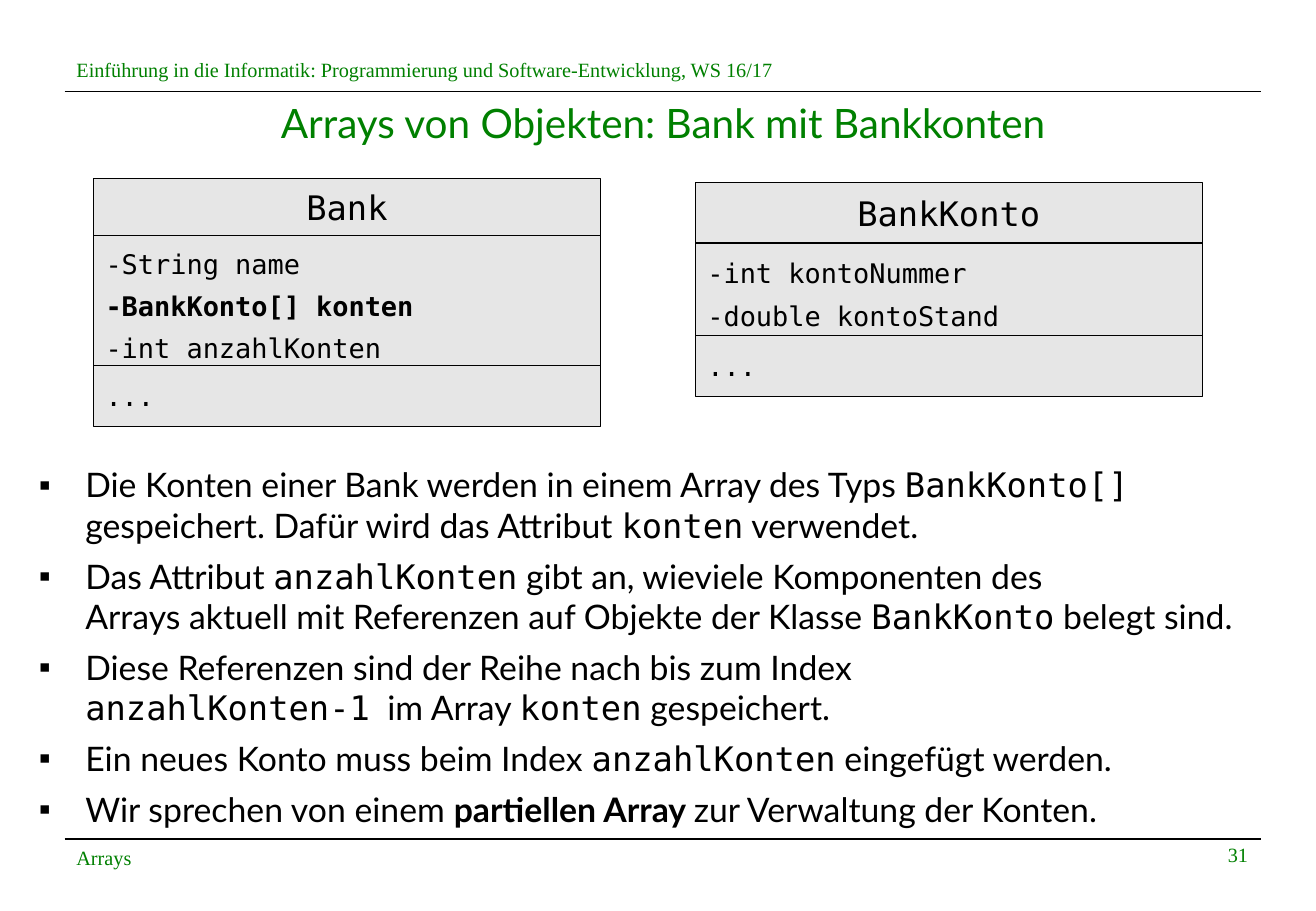
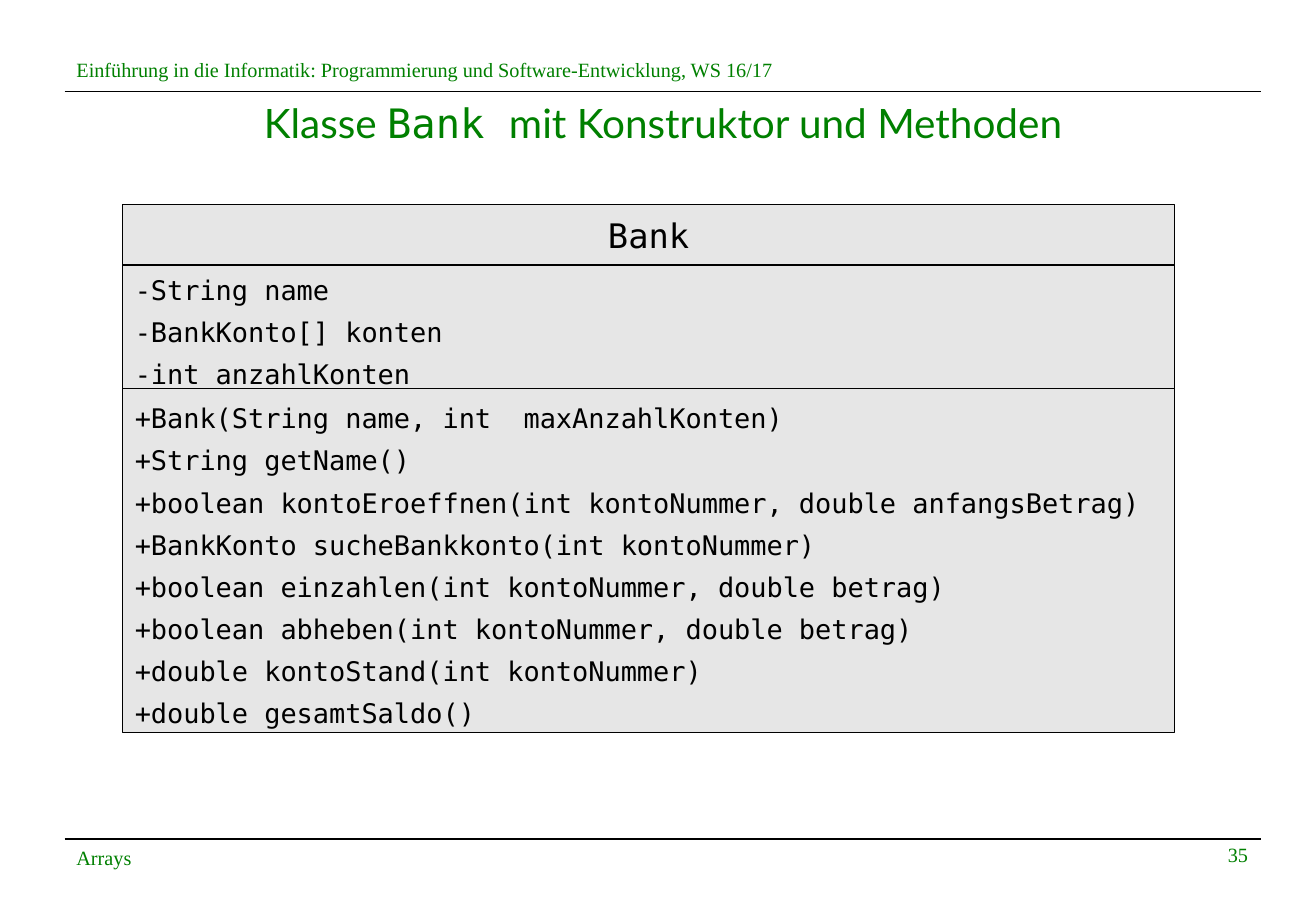
from dataclasses import dataclass

from lxml.etree import SubElement
from pptx import Presentation
from pptx.dml.color import RGBColor
from pptx.enum.shapes import MSO_CONNECTOR, MSO_SHAPE
from pptx.enum.text import MSO_ANCHOR, MSO_AUTO_SIZE, PP_ALIGN
from pptx.oxml.ns import qn
from pptx.presentation import Presentation as PresentationType
from pptx.shapes.base import BaseShape
from pptx.slide import Slide
from pptx.text.text import _Paragraph as Paragraph
from pptx.util import Cm, Pt


@dataclass(frozen=True)
class Theme:
    green: RGBColor = RGBColor(0x00, 0x80, 0x00)
    black: RGBColor = RGBColor(0x00, 0x00, 0x00)
    box_fill: RGBColor = RGBColor(0xE6, 0xE6, 0xE6)
    sans: str = "Lato"
    serif: str = "Times New Roman"
    mono: str = "DejaVu Sans Mono"
    title_size: int = 24
    body_size: int = 20
    code_size: int = 16
    footer_size: int = 12
    code_spacing: int = 25


THEME = Theme()


@dataclass(frozen=True)
class Box:
    """A rectangle in centimetres."""

    left: float
    top: float
    width: float
    height: float


@dataclass(frozen=True)
class Span:
    text: str
    code: bool = False
    bold: bool = False


@dataclass(frozen=True)
class Compartment:
    height: float
    lines: tuple[str, ...]
    emphasized: str = ""
    fixed_spacing: bool = True


@dataclass(frozen=True)
class ClassDiagram:
    left: float
    top: float
    width: float
    name: str
    name_height: float
    compartments: tuple[Compartment, ...]


@dataclass(frozen=True)
class Page:
    number: int
    title: tuple[Span, ...]
    diagrams: tuple[ClassDiagram, ...]
    bullets: tuple[tuple[Span, ...], ...] = ()


COURSE = "Einführung in die Informatik: Programmierung und Software-Entwicklung, WS 16/17"
CHAPTER = "Arrays"
RULE_LEFT, RULE_RIGHT = 1.35, 26.37
RULE_TOPS = (1.91, 17.55)
HEADER_BOX = Box(1.35, 1.07, 15.52, 0.79)
CHAPTER_BOX = Box(1.35, 17.58, 9.02, 0.74)
NUMBER_BOX = Box(19.76, 16.92, 6.6, 1.32)
TITLE_BOX = Box(1.37, 1.93, 25, 1.4)
BODY_BOX = Box(0.56, 9.58, 25.96, 7.95)
BULLET_INDENT = 0.97

ELLIPSIS = Compartment(1.27, ("...",), fixed_spacing=False)
BANK_ATTRIBUTES = ("-String name", "-BankKonto[] konten", "-int anzahlKonten")

PAGES = (
    Page(
        31,
        (Span("Arrays von Objekten: Bank mit Bankkonten"),),
        (
            ClassDiagram(14.55, 3.81, 10.6, "BankKonto", 1.27, (
                Compartment(1.94, ("-int kontoNummer", "-double kontoStand")),
                ELLIPSIS,
            )),
            ClassDiagram(1.96, 3.73, 10.6, "Bank", 1.2, (
                Compartment(2.72, BANK_ATTRIBUTES, emphasized="-BankKonto[] konten"),
                ELLIPSIS,
            )),
        ),
        (
            (
                Span("Die Konten einer Bank werden in einem Array des Typs "),
                Span("BankKonto[]\n", code=True),
                Span("gespeichert. Dafür wird das Attribut "),
                Span("konten", code=True),
                Span(" verwendet."),
            ),
            (
                Span("Das Attribut "),
                Span("anzahlKonten", code=True),
                Span(" gibt an, wieviele Komponenten des\n"
                     "Arrays aktuell mit Referenzen auf Objekte der Klasse "),
                Span("BankKonto", code=True),
                Span(" belegt sind."),
            ),
            (
                Span("Diese Referenzen sind der Reihe nach bis zum Index\n"),
                Span("anzahlKonten-1", code=True),
                Span("  im Array "),
                Span("konten", code=True),
                Span(" gespeichert."),
            ),
            (
                Span("Ein neues Konto muss beim Index "),
                Span("anzahlKonten", code=True),
                Span(" eingefügt werden."),
            ),
            (
                Span("Wir sprechen von einem "),
                Span("partiellen Array ", bold=True),
                Span("zur Verwaltung der Konten."),
            ),
        ),
    ),
    Page(
        35,
        (Span("Klasse "), Span("Bank ", code=True), Span("mit Konstruktor und Methoden")),
        (
            ClassDiagram(2.57, 4.27, 22, "Bank", 1.27, (
                Compartment(2.59, BANK_ATTRIBUTES),
                Compartment(7.19, (
                    "+Bank(String name, int  maxAnzahlKonten)",
                    "+String getName()",
                    "+boolean kontoEroeffnen(int kontoNummer, double anfangsBetrag)",
                    "+BankKonto sucheBankkonto(int kontoNummer)",
                    "+boolean einzahlen(int kontoNummer, double betrag)",
                    "+boolean abheben(int kontoNummer, double betrag)",
                    "+double kontoStand(int kontoNummer)",
                    "+double gesamtSaldo()",
                )),
            )),
        ),
    ),
)


def place(shape: BaseShape, box: Box) -> None:
    shape.left, shape.top = Cm(box.left), Cm(box.top)
    shape.width, shape.height = Cm(box.width), Cm(box.height)


def set_font(paragraph: Paragraph, name: str, size: int, color: RGBColor) -> None:
    paragraph.font.name = name
    paragraph.font.size = Pt(size)
    paragraph.font.color.rgb = color


def add_spans(paragraph: Paragraph, spans: tuple[Span, ...]) -> None:
    """Append runs that differ from the paragraph's font only where marked."""
    for span in spans:
        for index, text in enumerate(span.text.split("\n")):
            if index:
                paragraph.add_line_break()
            if text:
                run = paragraph.add_run()
                run.text = text
                if span.code:
                    run.font.name = THEME.mono
                if span.bold:
                    run.font.bold = True


def next_paragraph(shape: BaseShape, index: int) -> Paragraph:
    frame = shape.text_frame
    return frame.add_paragraph() if index else frame.paragraphs[0]


def add_label(slide: Slide, box: Box, text: str, anchor: MSO_ANCHOR = MSO_ANCHOR.BOTTOM,
              alignment: PP_ALIGN = PP_ALIGN.LEFT) -> None:
    label = slide.shapes.add_textbox(
        Cm(box.left), Cm(box.top), Cm(box.width), Cm(box.height))
    label.text_frame.word_wrap = True
    label.text_frame.vertical_anchor = anchor
    paragraph = label.text_frame.paragraphs[0]
    paragraph.text = text
    paragraph.alignment = alignment
    set_font(paragraph, THEME.serif, THEME.footer_size, THEME.green)


def add_frame(slide: Slide, number: int) -> None:
    """Draw the rules, header and footer common to every slide."""
    for top in RULE_TOPS:
        rule = slide.shapes.add_connector(
            MSO_CONNECTOR.STRAIGHT, Cm(RULE_LEFT), Cm(top), Cm(RULE_RIGHT), Cm(top))
        rule.line.color.rgb = THEME.black
        rule.line.width = Pt(1)
        SubElement(rule.element.spPr, qn("a:effectLst"))
    add_label(slide, HEADER_BOX, COURSE, anchor=MSO_ANCHOR.TOP)
    add_label(slide, CHAPTER_BOX, CHAPTER)
    add_label(slide, NUMBER_BOX, str(number), alignment=PP_ALIGN.RIGHT)


def fill_title(slide: Slide, spans: tuple[Span, ...]) -> None:
    title = slide.shapes.title
    place(title, TITLE_BOX)
    title.text_frame.auto_size = MSO_AUTO_SIZE.NONE
    title.text_frame.vertical_anchor = MSO_ANCHOR.TOP
    paragraph = title.text_frame.paragraphs[0]
    paragraph.alignment = PP_ALIGN.CENTER
    set_font(paragraph, THEME.sans, THEME.title_size, THEME.green)
    add_spans(paragraph, spans)


def set_bullet(paragraph: Paragraph) -> None:
    properties = paragraph._p.get_or_add_pPr()
    properties.set("marL", str(Cm(BULLET_INDENT)))
    properties.set("indent", str(-Cm(BULLET_INDENT)))
    SubElement(properties, qn("a:buChar")).set("char", "▪")


def fill_body(slide: Slide, bullets: tuple[tuple[Span, ...], ...]) -> None:
    body = slide.placeholders[1]
    place(body, BODY_BOX)
    body.text_frame.auto_size = MSO_AUTO_SIZE.NONE
    for index, spans in enumerate(bullets):
        paragraph = next_paragraph(body, index)
        paragraph.space_before = Pt(0)
        paragraph.space_after = Pt(6)
        set_bullet(paragraph)
        set_font(paragraph, THEME.sans, THEME.body_size, THEME.black)
        add_spans(paragraph, spans)


def add_cell(slide: Slide, box: Box) -> BaseShape:
    cell = slide.shapes.add_shape(
        MSO_SHAPE.RECTANGLE, Cm(box.left), Cm(box.top), Cm(box.width), Cm(box.height))
    cell.shadow.inherit = False
    cell.fill.solid()
    cell.fill.fore_color.rgb = THEME.box_fill
    cell.line.color.rgb = THEME.black
    cell.line.width = Pt(0)
    cell.text_frame.vertical_anchor = MSO_ANCHOR.MIDDLE
    return cell


def add_class_diagram(slide: Slide, diagram: ClassDiagram) -> None:
    heading = add_cell(
        slide, Box(diagram.left, diagram.top, diagram.width, diagram.name_height))
    paragraph = heading.text_frame.paragraphs[0]
    paragraph.text = diagram.name
    paragraph.alignment = PP_ALIGN.CENTER
    set_font(paragraph, THEME.mono, THEME.body_size, THEME.black)

    top = diagram.top + diagram.name_height
    for compartment in diagram.compartments:
        cell = add_cell(slide, Box(diagram.left, top, diagram.width, compartment.height))
        for index, line in enumerate(compartment.lines):
            paragraph = next_paragraph(cell, index)
            paragraph.text = line
            paragraph.alignment = PP_ALIGN.LEFT
            if compartment.fixed_spacing:
                paragraph.line_spacing = Pt(THEME.code_spacing)
            set_font(paragraph, THEME.mono, THEME.code_size, THEME.black)
            paragraph.font.bold = line == compartment.emphasized
        top += compartment.height


def add_page(presentation: PresentationType, page: Page) -> None:
    layout_name = "Title and Content" if page.bullets else "Title Only"
    slide = presentation.slides.add_slide(
        presentation.slide_layouts.get_by_name(layout_name))
    add_frame(slide, page.number)
    fill_title(slide, page.title)
    for diagram in page.diagrams:
        add_class_diagram(slide, diagram)
    if page.bullets:
        fill_body(slide, page.bullets)


def main() -> None:
    presentation = Presentation()
    presentation.slide_width, presentation.slide_height = Cm(27.53), Cm(19.05)
    for page in PAGES:
        add_page(presentation, page)
    presentation.save("out.pptx")


if __name__ == "__main__":
    main()
